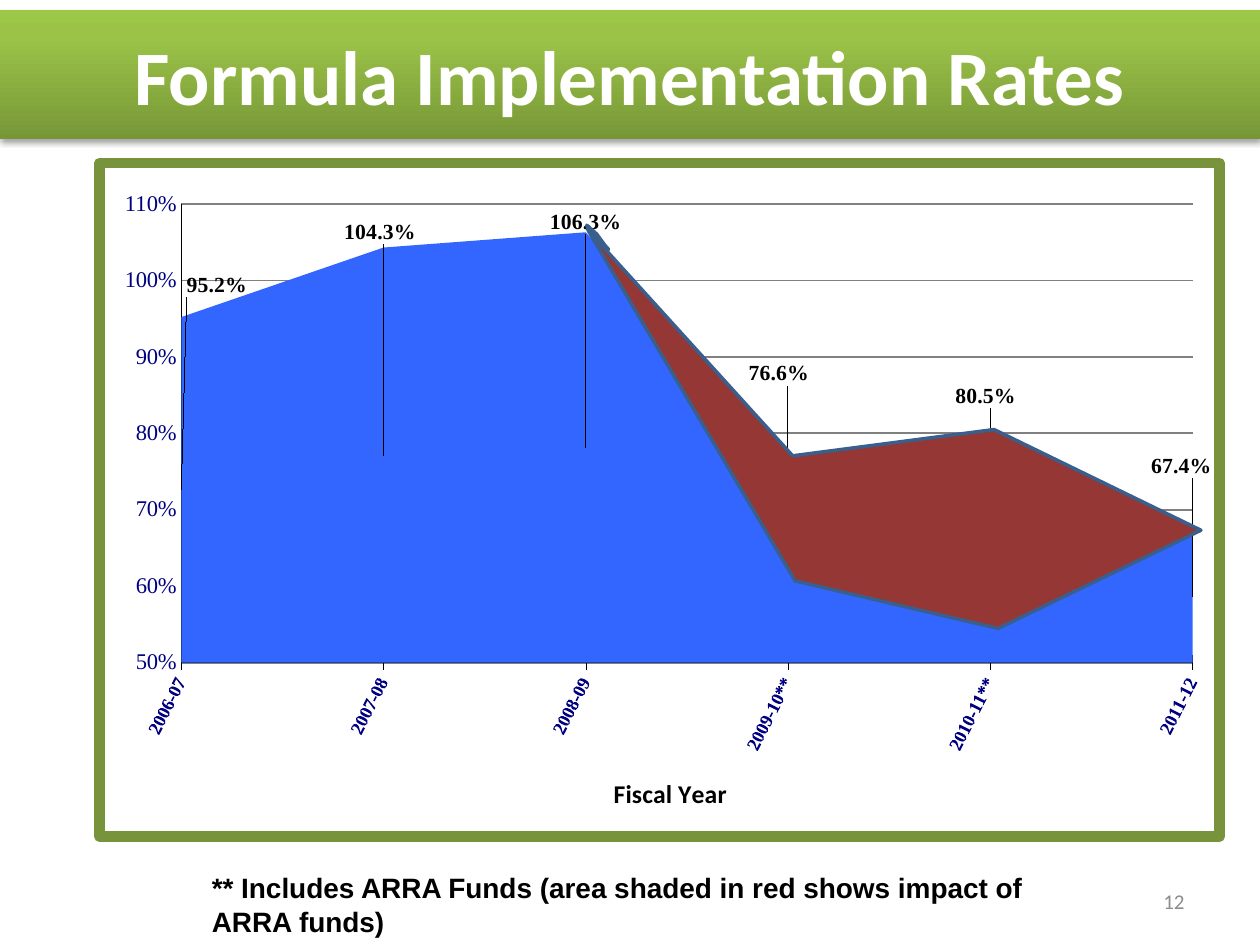
from typing import NamedTuple

from lxml import etree
from pptx import Presentation
from pptx.chart.data import CategoryChartData
from pptx.dml.color import RGBColor
from pptx.enum.chart import XL_CHART_TYPE, XL_TICK_MARK
from pptx.enum.shapes import MSO_SHAPE
from pptx.enum.text import MSO_ANCHOR, PP_ALIGN
from pptx.oxml import parse_xml
from pptx.oxml.ns import nsdecls, qn
from pptx.util import Cm, Pt

AREA = XL_CHART_TYPE.AREA
CROSS, NO_TICK = XL_TICK_MARK.CROSS, XL_TICK_MARK.NONE
RECT = MSO_SHAPE.RECTANGLE
TOP, MIDDLE = MSO_ANCHOR.TOP, MSO_ANCHOR.MIDDLE
LEFT, CENTER, RIGHT = PP_ALIGN.LEFT, PP_ALIGN.CENTER, PP_ALIGN.RIGHT
SERIF = "Times New Roman"
NAVY = "000080"
BLACK = "000000"


class Rate(NamedTuple):
    year: str
    value: float
    dx: float  # label offset from the middle of the area, as a share of the chart
    dy: float


class Text(NamedTuple):
    text: str
    font: str
    size: float
    color: str
    bold: bool
    align: PP_ALIGN
    anchor: MSO_ANCHOR


RATES = [
    Rate("2006-07", 0.952, 0.032, -0.304),
    Rate("2007-08", 1.043, -0.003, -0.331),
    Rate("2008-09", 1.063, 0, -0.334),
    Rate("2009-10**", 0.766, -0.008, -0.278),
    Rate("2010-11**", 0.805, -0.004, -0.223),
    Rate("2011-12", 0.674, -0.01, -0.193),
]
TITLE = Text("Formula Implementation Rates", "Calibri", 44, "FFFFFF", True, CENTER, MIDDLE)
NUMBER = Text("12", "Calibri", 12, "8C8C8C", False, RIGHT, MIDDLE)
NOTE = Text("** Includes ARRA Funds (area shaded in red shows impact of ARRA funds)",
            "Arial", 16, BLACK, True, LEFT, TOP)
ARRA_OUTLINE = [
    (11.86, 4.65), (11.83, 4.54), (12.03, 4.72), (12.19, 4.94), (12.27, 5.03),
    (12.07, 4.9), (11.91, 4.72), (11.86, 4.65), (15.98, 9.19), (20.04, 8.66),
    (24.21, 10.69), (20.12, 12.67), (16.03, 11.71),
]


def rgb(value: str) -> RGBColor:
    return RGBColor.from_string(value)


def set_font(font, name: str, size: float, color: str, bold: bool) -> None:
    font.name, font.size, font.bold = name, Pt(size), bold
    font.color.rgb = rgb(color)


def set_line(line, color: str, width: float) -> None:
    line.color.rgb = rgb(color)
    line.width = Pt(width)


def write(sp, text: Text) -> None:
    tf = sp.text_frame
    tf.word_wrap = True
    tf.vertical_anchor = text.anchor
    p = tf.paragraphs[0]
    p.text = text.text
    p.alignment = text.align
    set_font(p.font, text.font, text.size, text.color, text.bold)


def add_text(slide, text: Text, left: float, top: float, width: float, height: float) -> None:
    write(slide.shapes.add_textbox(Cm(left), Cm(top), Cm(width), Cm(height)), text)


def add_title_band(slide) -> None:
    sp = slide.shapes.add_shape(RECT, 0, Cm(0.21), Cm(25.4), Cm(2.6))
    sp.line.fill.background()
    stops = "".join(f'<a:gs pos="{pos}000"><a:srgbClr val="{color}"/></a:gs>'
                    for pos, color in [(0, "779737"), (80, "9BC348"), (100, "9DC746")])
    sp_pr = sp._element.spPr
    sp_pr.insert(2, parse_xml(
        f'<a:gradFill {nsdecls("a")} rotWithShape="1"><a:gsLst>{stops}</a:gsLst>'
        '<a:lin ang="16200000" scaled="0"/></a:gradFill>'))
    sp_pr.append(parse_xml(
        f'<a:effectLst {nsdecls("a")}><a:outerShdw blurRad="{Pt(3.1)}" dist="{Pt(1.8)}" '
        'dir="5400000" rotWithShape="0"><a:srgbClr val="000000"><a:alpha val="35000"/>'
        '</a:srgbClr></a:outerShdw></a:effectLst>'))
    write(sp, TITLE)


def manual_layout(x: float, y: float, extra: str = "", modes: str = "") -> etree._Element:
    return parse_xml(f'<c:layout {nsdecls("c")}><c:manualLayout>{modes}'
                     f'<c:x val="{x}"/><c:y val="{y}"/>{extra}'
                     '</c:manualLayout></c:layout>')


def place(parent, layout: etree._Element, index: int) -> None:
    """Replace the layout of a chart part."""
    for old in parent.findall(qn("c:layout")):
        parent.remove(old)
    parent.insert(index, layout)


def label_points(series) -> None:
    """Label every point at its own offset, without leader lines."""
    labels = series.data_labels
    labels.show_value = True
    labels.number_format, labels.number_format_is_linked = "0.0%", False
    set_font(labels.font, SERIF, 12.5, BLACK, True)
    for i, rate in enumerate(RATES):
        label = parse_xml(
            f'<c:dLbl {nsdecls("c")}><c:idx val="{i}"/>'
            '<c:showLegendKey val="0"/><c:showVal val="1"/><c:showCatName val="0"/>'
            '<c:showSerName val="0"/><c:showPercent val="0"/><c:showBubbleSize val="0"/>'
            '</c:dLbl>')
        label.insert(1, manual_layout(rate.dx, rate.dy))
        labels._element.insert(i, label)
    for old in labels._element.findall(qn("c:showLeaderLines")):
        labels._element.remove(old)
    labels._element.append(parse_xml(
        f'<c:extLst {nsdecls("c")}><c:ext uri="{{CE6537A1-D6FC-4f65-9D91-7224C49458BB}}" '
        'xmlns:c15="http://schemas.microsoft.com/office/drawing/2012/chart">'
        '<c15:showLeaderLines val="0"/></c:ext></c:extLst>'))


def style_axes(chart) -> None:
    cat, val = chart.category_axis, chart.value_axis
    for axis, size, bold in [(cat, 10.8, True), (val, 13, False)]:
        set_font(axis.tick_labels.font, SERIF, size, NAVY, bold)
        set_line(axis.format.line, BLACK, 0.25)
        axis.minor_tick_mark = NO_TICK
    cat.major_tick_mark, val.major_tick_mark = CROSS, NO_TICK
    cat._element.find(qn("c:txPr")).find(qn("a:bodyPr")).set("rot", "-3780000")
    val._element.find(qn("c:crossBetween")).set("val", "midCat")
    val.minimum_scale, val.maximum_scale, val.major_unit = 0.5, 1.1, 0.1
    val.tick_labels.number_format = "0%"
    val.tick_labels.number_format_is_linked = False
    set_line(val.major_gridlines.format.line, "808080", 1)

    p = cat.axis_title.text_frame.paragraphs[0]
    p.text = "Fiscal Year"
    set_font(p.font, "Calibri", 14.8, BLACK, True)
    edges = '<c:xMode val="edge"/><c:yMode val="edge"/>'
    place(cat.axis_title._element, manual_layout(0.455, 0.903, modes=edges), 1)
    place(chart._chartSpace.chart.plotArea, manual_layout(
        0.073, 0.061, '<c:w val="0.903"/><c:h val="0.681"/>',
        '<c:layoutTarget val="inner"/>' + edges), 0)


def add_rates_chart(slide) -> None:
    data = CategoryChartData(number_format="0.0%")
    data.categories = [rate.year for rate in RATES]
    data.add_series("Series 1", [rate.value for rate in RATES])
    chart = slide.shapes.add_chart(AREA, Cm(1.9), Cm(3.18), Cm(22.79), Cm(13.79), data).chart
    chart.has_legend = chart.has_title = False
    set_font(chart.font, SERIF, 19.5, BLACK, True)
    chart.plots[0].vary_by_categories = False
    series = chart.plots[0].series[0]
    series.format.fill.solid()
    series.format.fill.fore_color.rgb = rgb("3366FF")
    label_points(series)
    style_axes(chart)
    chart._chartSpace.find(qn("c:chart")).addnext(parse_xml(
        f'<c:spPr {nsdecls("c", "a")}><a:noFill/><a:ln w="{Pt(6)}"><a:solidFill>'
        '<a:srgbClr val="77933C"/></a:solidFill><a:round/></a:ln></c:spPr>'))


def add_arra_area(slide) -> None:
    points = [(Cm(x), Cm(y)) for x, y in ARRA_OUTLINE]
    builder = slide.shapes.build_freeform(*points[0])
    builder.add_line_segments(points[1:], close=True)
    sp = builder.convert_to_shape()
    sp.shadow.inherit = False
    sp.fill.solid()
    sp.fill.fore_color.rgb = rgb("953735")
    set_line(sp.line, "3A5F8C", 2)


def main() -> None:
    prs = Presentation()
    prs.slide_width, prs.slide_height = Cm(25.4), Cm(19.05)
    slide = prs.slides.add_slide(prs.slide_layouts[6])
    add_title_band(slide)
    add_rates_chart(slide)
    add_text(slide, NUMBER, 18.21, 17.65, 5.92, 1.02)
    add_text(slide, NOTE, 4.02, 17.43, 17.98, 1.62)
    add_arra_area(slide)
    prs.save("out.pptx")


if __name__ == "__main__":
    main()
